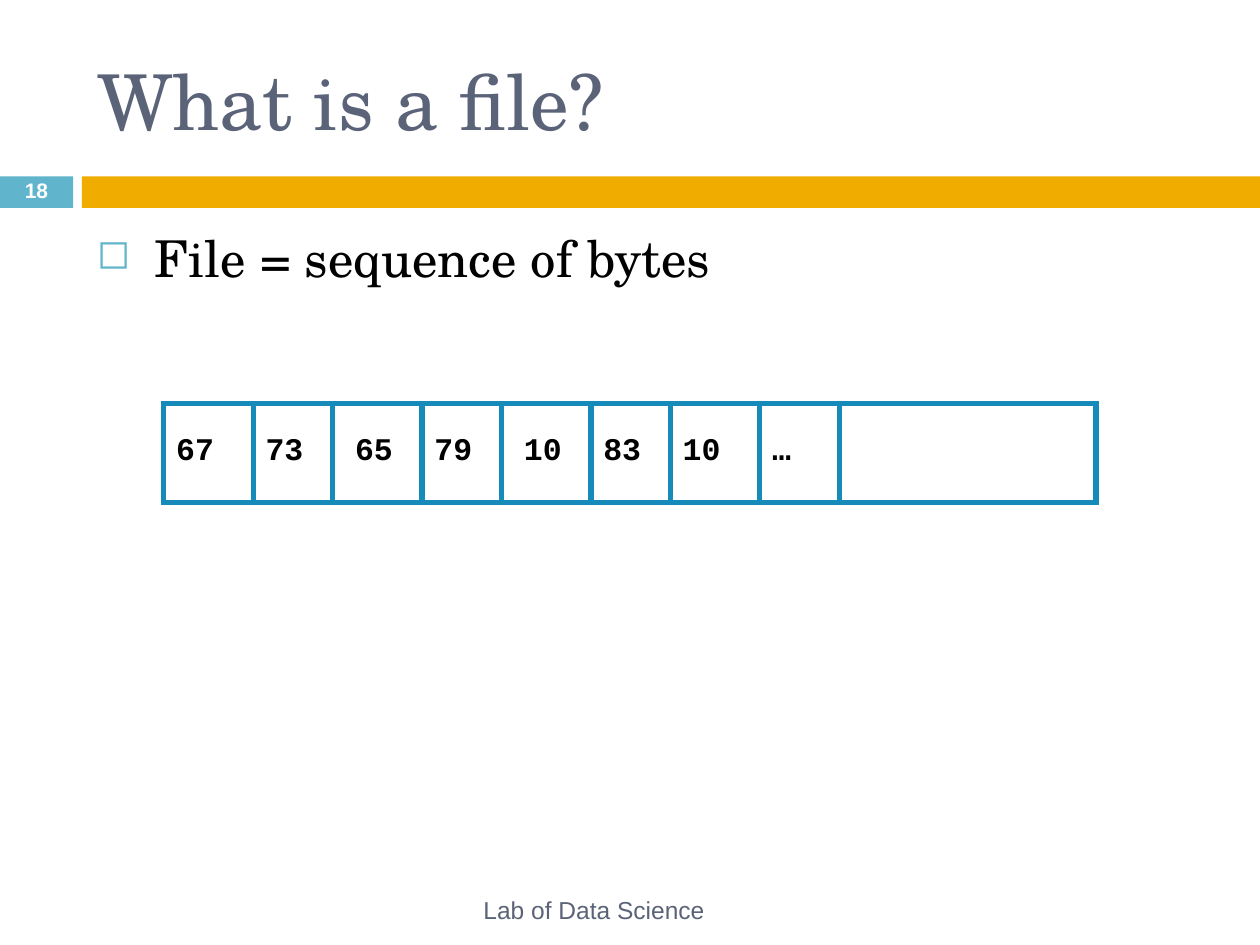
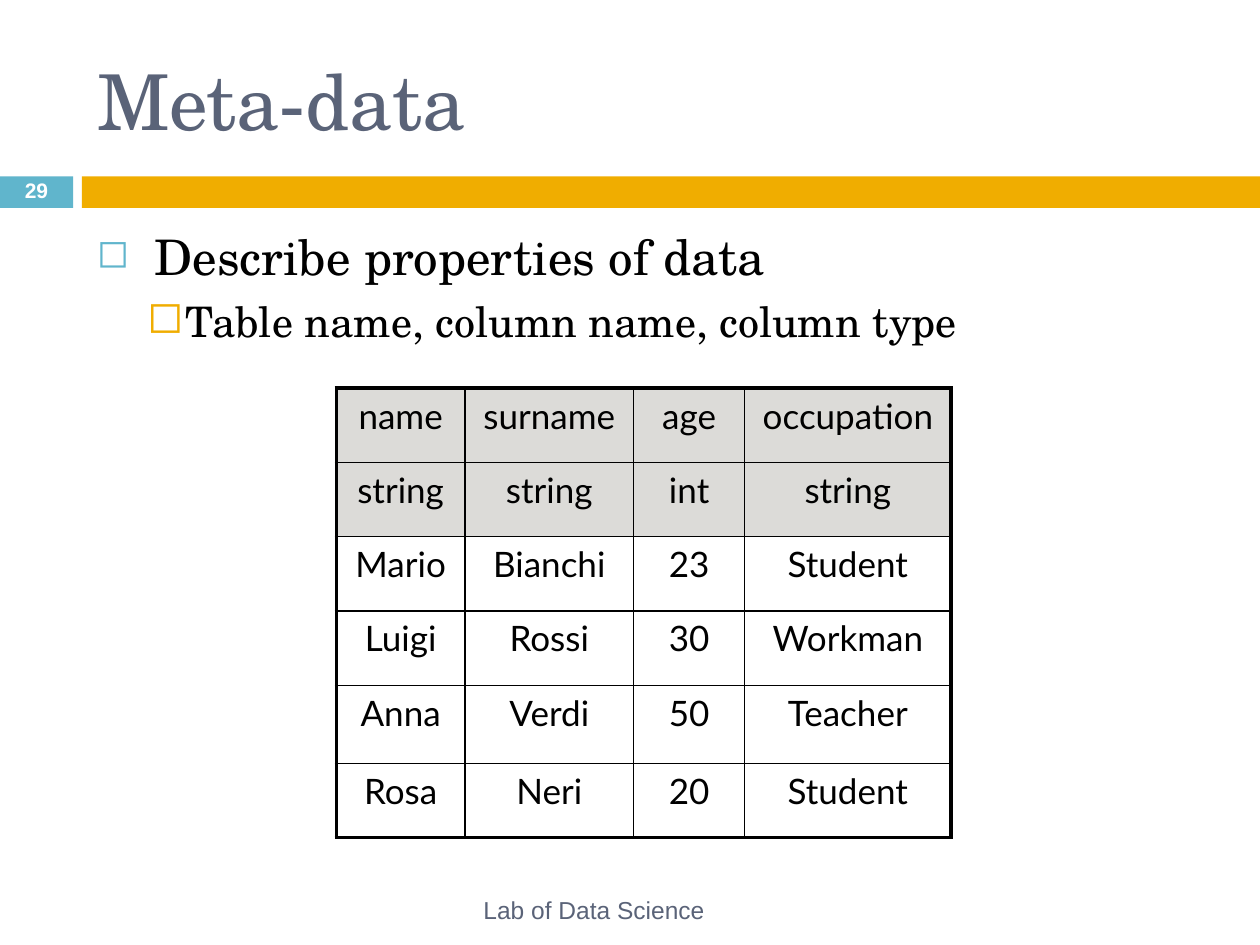
from lxml.etree import SubElement
from pptx import Presentation
from pptx.dml.color import RGBColor
from pptx.enum.shapes import MSO_CONNECTOR, MSO_SHAPE
from pptx.enum.text import MSO_ANCHOR, MSO_AUTO_SIZE, PP_ALIGN
from pptx.oxml import parse_xml
from pptx.oxml.ns import nsdecls, qn
from pptx.util import Inches, Pt

SLATE = RGBColor(0x5A, 0x63, 0x78)
SKY = RGBColor(0x60, 0xB5, 0xCC)
AMBER = RGBColor(0xF0, 0xAD, 0x00)
OCEAN = RGBColor(0x16, 0x8B, 0xBA)
STONE = RGBColor(0xBB, 0xB9, 0xB3)
BLACK = RGBColor(0, 0, 0)
WHITE = RGBColor(0xFF, 0xFF, 0xFF)

SERIF, SANS, MONO, TABLE_FONT = "TeX Gyre Schola", "Arial", "Courier New", "Lato"

# Square bullet per level: colour, size in percent, text indent, hanging indent
BULLET_GLYPH = "◻"
BULLETS = [(SKY, 80, 0.46, 0.46), (AMBER, 105, 0.7, 0.3)]

# Page number, title, and bullets as (level, size, text)
SLIDES = [
    ("18", "What is a file?", [(0, 29, "File = sequence of bytes")]),
    ("29", "Meta-data", [(0, 28, "Describe properties of data"),
                         (1, 24, "Table name, column name, column type")]),
]


def style(para, name, size, color, bold=False, align=PP_ALIGN.LEFT):
    para.alignment = align
    para.font.name = name
    para.font.size = Pt(size)
    para.font.color.rgb = color
    para.font.bold = bold


def add_text(page, left, top, width, height, text="", anchor=MSO_ANCHOR.TOP):
    box = page.shapes.add_textbox(Inches(left), Inches(top), Inches(width), Inches(height))
    frame = box.text_frame
    frame.word_wrap = True
    frame.vertical_anchor = anchor
    frame.text = text
    return frame


deck = Presentation()
deck.slide_width, deck.slide_height = Inches(10), Inches(7.5)

# Shared frame: bands, title, bullets, footer and page number
pages = []
for number, heading, bullets in SLIDES:
    page = deck.slides.add_slide(deck.slide_layouts[5])
    pages.append(page)

    for left, width, color in [(0, 0.58, SKY), (0.65, 9.35, AMBER)]:
        band = page.shapes.add_shape(MSO_SHAPE.RECTANGLE, Inches(left), Inches(1.4),
                                     Inches(width), Inches(0.25))
        band.shadow.inherit = False
        band.fill.solid()
        band.fill.fore_color.rgb = color
        band.line.fill.background()

    title = page.shapes.title
    title.left, title.top = Inches(0.67), Inches(0.25)
    title.width, title.height = Inches(8.92), Inches(1.08)
    title.text_frame.text = heading
    title.text_frame.auto_size = MSO_AUTO_SIZE.NONE
    title.text_frame.vertical_anchor = MSO_ANCHOR.MIDDLE
    style(title.text_frame.paragraphs[0], SERIF, 44, SLATE)

    body = add_text(page, 0.67, 1.75, 8.92, 4.92)
    for index, (level, size, text) in enumerate(bullets):
        para = body.add_paragraph() if index else body.paragraphs[0]
        para.text = text
        para.level = level
        style(para, SERIF, size, BLACK)
        if level:
            para.space_before = Pt(5.5)
        color, percent, indent, hanging = BULLETS[level]
        props = para._p.get_or_add_pPr()
        props.set("marL", str(Inches(indent)))
        props.set("indent", str(-Inches(hanging)))
        # Bullet settings belong after the spacing, ahead of the run defaults
        for place, xml in enumerate([
                f'<a:buClr {nsdecls("a")}><a:srgbClr val="{color}"/></a:buClr>',
                f'<a:buSzPct {nsdecls("a")} val="{percent * 1000}"/>',
                f'<a:buChar {nsdecls("a")} char="{BULLET_GLYPH}"/>']):
            props.insert(len(props.findall(qn("a:spcBef"))) + place, parse_xml(xml))

    footer = add_text(page, 1.75, 7.02, 5.93, 0.4, "Lab of Data Science", MSO_ANCHOR.MIDDLE)
    style(footer.paragraphs[0], SANS, 14, SLATE, align=PP_ALIGN.CENTER)
    counter = add_text(page, 0, 1.39, 0.58, 0.27, number, MSO_ANCHOR.MIDDLE)
    style(counter.paragraphs[0], SANS, 12, WHITE, bold=True, align=PP_ALIGN.CENTER)
    counter.paragraphs[0].line_spacing = 0.8

file_page, metadata_page = pages

# Byte strip: wide and narrow cells alternate, the rest stays empty
STRIP_LEFT, STRIP_TOP, STRIP_WIDTH, STRIP_HEIGHT = 1.3, 3.2, 7.4, 0.79
CELL_WIDTHS = (0.71, 0.63)
LABEL_WIDTH = 0.63
RIGHT_SET = (2, 4)

strip = file_page.shapes.add_shape(MSO_SHAPE.RECTANGLE, Inches(STRIP_LEFT), Inches(STRIP_TOP),
                                   Inches(STRIP_WIDTH), Inches(STRIP_HEIGHT))
strip.shadow.inherit = False
strip.fill.background()
strip.line.color.rgb = OCEAN
strip.line.width = Pt(3)
# Square corners
SubElement(strip._element.spPr.find(qn("a:ln")), qn("a:miter")).set("lim", "800000")

left = STRIP_LEFT
for index, byte in enumerate(["67", "73", "65", "79", "10", "83", "10", "…"]):
    right = left + CELL_WIDTHS[index % 2]
    divider = file_page.shapes.add_connector(
        MSO_CONNECTOR.STRAIGHT, Inches(right), Inches(STRIP_TOP),
        Inches(right), Inches(STRIP_TOP + STRIP_HEIGHT))
    divider.line.color.rgb = OCEAN
    divider.line.width = Pt(3)
    SubElement(divider._element.spPr, qn("a:effectLst"))
    label_left = right - LABEL_WIDTH if index in RIGHT_SET else left
    label = add_text(file_page, label_left, 3.36, LABEL_WIDTH, 0.4, byte)
    style(label.paragraphs[0], MONO, 18, BLACK, bold=True)
    left = right

# Metadata table: two shaded header rows, heavy outer frame
ROWS = [
    ("name", "surname", "age", "occupation"),
    ("string", "string", "int", "string"),
    ("Mario", "Bianchi", "23", "Student"),
    ("Luigi", "Rossi", "30", "Workman"),
    ("Anna", "Verdi", "50", "Teacher"),
    ("Rosa", "Neri", "20", "Student"),
]
COLUMN_WIDTHS = (1.02, 1.34, 0.88, 1.64)
ROW_HEIGHTS = (0.59, 0.59, 0.59, 0.59, 0.62, 0.59)
HEADER_ROWS = 2
last_row, last_column = len(ROWS) - 1, len(COLUMN_WIDTHS) - 1

table = metadata_page.shapes.add_table(
    len(ROWS), len(COLUMN_WIDTHS), Inches(2.67), Inches(3.08),
    Inches(sum(COLUMN_WIDTHS)), Inches(sum(ROW_HEIGHTS))).table
table.first_row = table.horz_banding = False
for column, width in zip(table.columns, COLUMN_WIDTHS):
    column.width = Inches(width)
for row, height in zip(table.rows, ROW_HEIGHTS):
    row.height = Inches(height)

for r, values in enumerate(ROWS):
    for c, value in enumerate(values):
        cell = table.cell(r, c)
        cell.text = value
        style(cell.text_frame.paragraphs[0], TABLE_FONT, 20, BLACK, align=PP_ALIGN.CENTER)
        props = cell._tc.get_or_add_tcPr()
        if r < HEADER_ROWS:
            cell.fill.solid()
            cell.fill.fore_color.rgb = STONE
            shade = props.find(qn("a:solidFill")).find(qn("a:srgbClr"))
            SubElement(shade, qn("a:alpha")).set("val", "50000")
        else:
            cell.fill.background()
        # Border lines come before the fill
        edges = [("lnL", c == 0), ("lnR", c == last_column),
                 ("lnT", r == 0), ("lnB", r == last_row)]
        for place, (tag, outer) in enumerate(edges):
            props.insert(place, parse_xml(
                f'<a:{tag} {nsdecls("a")} w="{Pt(2.25 if outer else 1)}"><a:solidFill>'
                f'<a:srgbClr val="{BLACK}"/></a:solidFill></a:{tag}>'))

deck.save("out.pptx")
